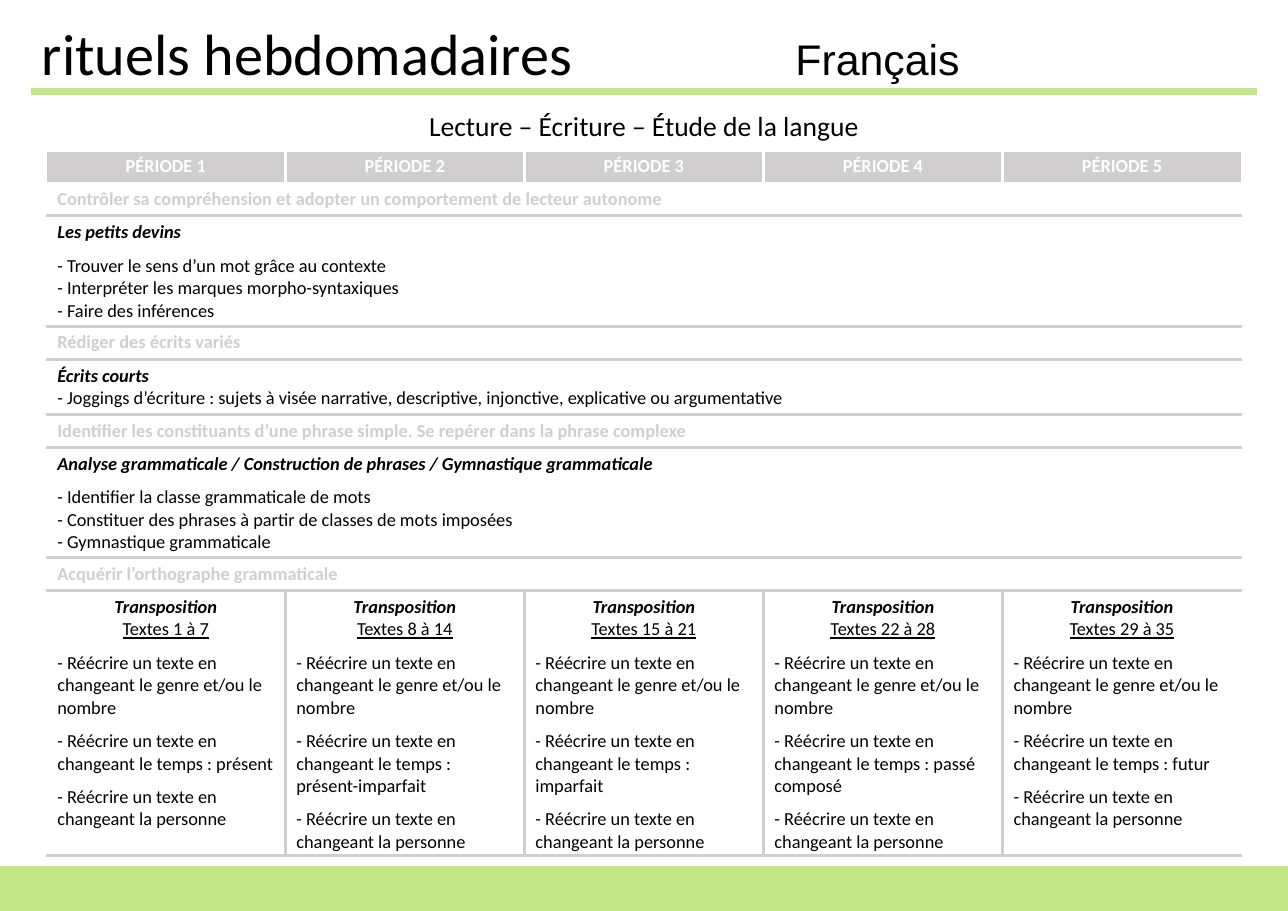
from dataclasses import dataclass

from lxml.etree import SubElement
from pptx import Presentation
from pptx.dml.color import RGBColor
from pptx.enum.shapes import MSO_CONNECTOR as Connector, MSO_SHAPE as Shape
from pptx.enum.text import MSO_ANCHOR as Anchor, MSO_AUTO_SIZE as AutoSize, PP_ALIGN as Align
from pptx.oxml import parse_xml
from pptx.oxml.ns import nsdecls, qn
from pptx.util import Emu, Inches, Pt

COLOURS = {
    "black": "000000",
    "white": "FFFFFF",
    "green": "C3E686",
    "grey": "D0CECE",
    "heading": "D1CECE",
}
WIDTH, HEIGHT = Inches(11.69), Inches(8.27)
PERIODS = 5
COLUMN = Inches(2.17)
TABLE_LEFT, TABLE_TOP = Inches(0.42), Inches(0.95)
MARGIN = Inches(0.28)
SUBJECT_TAB = Inches(6.84)
GAP = 7.3


@dataclass(frozen=True)
class Line:
    text: str
    colour: str = "black"
    size: float = 12
    bold: bool = False
    italic: bool = False
    underline: bool = False
    centred: bool = False
    gap: float = 0


@dataclass(frozen=True)
class Border:
    colour: str = "white"
    width: float = 1


@dataclass(frozen=True)
class Row:
    """A row holds one list of lines per cell; a single cell spans every column."""
    height: float
    cells: list[list[Line]]
    top: Border
    bottom: Border
    inner: Border = Border()
    fill: str = ""


RULE = Border("grey", 2.25)


def rgb(name: str) -> RGBColor:
    return RGBColor.from_string(COLOURS[name])


def heading_row(text: str, top: Border = RULE) -> Row:
    return Row(0.3, [[Line(text, "heading", bold=True)]], top, RULE)


def activity_row(height: float, name: str, items: list[str], gap: float = GAP) -> Row:
    lines = [Line(name, bold=True, italic=True)]
    lines += [Line(f"- {item}", gap=0 if i else gap) for i, item in enumerate(items)]
    return Row(height, [lines], RULE, RULE)


def transposition(texts: str, tense: str) -> list[Line]:
    aims = ["le genre et/ou le nombre", f"le temps : {tense}", "la personne"]
    return [
        Line("Transposition", bold=True, italic=True, centred=True),
        Line(f"Textes {texts}", underline=True, centred=True),
        *(Line(f"- Réécrire un texte en changeant {aim}", gap=GAP) for aim in aims),
    ]


TRANSPOSITIONS = [
    ("1 à 7", "présent"),
    ("8 à 14", "présent-imparfait"),
    ("15 à 21", "imparfait"),
    ("22 à 28", "passé composé"),
    ("29 à 35", "futur"),
]
ROWS = [
    Row(0.41, [[Line("Lecture – Écriture – Étude de la langue", size=18, centred=True)]],
        Border(), Border("white", 3)),
    Row(0.3, [[Line(f"PÉRIODE {n}", "white", bold=True, centred=True)]
              for n in range(1, PERIODS + 1)],
        Border(), Border(), Border("white", 2.25), "grey"),
    heading_row("Contrôler sa compréhension et adopter un comportement de lecteur autonome",
                Border()),
    activity_row(1, "Les petits devins", [
        "Trouver le sens d’un mot grâce au contexte",
        "Interpréter les marques morpho-syntaxiques",
        "Faire des inférences"]),
    heading_row("Rédiger des écrits variés"),
    activity_row(0.5, "Écrits courts", [
        "Joggings d’écriture : sujets à visée narrative, descriptive, injonctive, "
        "explicative ou argumentative"], gap=0),
    heading_row("Identifier les constituants d’une phrase simple. "
                "Se repérer dans la phrase complexe"),
    activity_row(1, "Analyse grammaticale / Construction de phrases / Gymnastique grammaticale", [
        "Identifier la classe grammaticale de mots",
        "Constituer des phrases à partir de classes de mots imposées",
        "Gymnastique grammaticale"]),
    heading_row("Acquérir l’orthographe grammaticale"),
    Row(2.39, [transposition(*period) for period in TRANSPOSITIONS], RULE, RULE, RULE),
]


def set_borders(cell, left: Border, right: Border, top: Border, bottom: Border) -> None:
    properties = cell._tc.get_or_add_tcPr()
    for side, border in zip("LRTB", (left, right, top, bottom)):
        properties.append(parse_xml(
            f'<a:ln{side} {nsdecls("a")} w="{Pt(border.width)}"><a:solidFill>'
            f'<a:srgbClr val="{COLOURS[border.colour]}"/></a:solidFill></a:ln{side}>'))


def write_lines(frame, lines: list[Line]) -> None:
    frame.text = "\n".join(line.text for line in lines)
    for paragraph, line in zip(frame.paragraphs, lines):
        paragraph.alignment = Align.CENTER if line.centred else Align.LEFT
        paragraph.space_before = Pt(line.gap)
        font = paragraph.runs[0].font
        font.name, font.size = "Calibri", Pt(line.size)
        font.bold, font.italic, font.underline = line.bold, line.italic, line.underline
        font.color.rgb = rgb(line.colour)


def add_rituals_table(slide) -> None:
    total = Inches(sum(row.height for row in ROWS))
    table = slide.shapes.add_table(
        len(ROWS), PERIODS, TABLE_LEFT, TABLE_TOP, COLUMN * PERIODS, total).table
    table.first_row = table.horz_banding = False
    for column in table.columns:
        column.width = COLUMN
    for r, row in enumerate(ROWS):
        table.rows[r].height = Inches(row.height)
        for c in range(PERIODS):
            cell = table.cell(r, c)
            cell.margin_bottom = Inches(0.02)
            set_borders(cell, row.inner if c else Border(),
                        row.inner if c < PERIODS - 1 else Border(), row.top, row.bottom)
            if row.fill:
                cell.fill.solid()
                cell.fill.fore_color.rgb = rgb(row.fill)
            else:
                cell.fill.background()
        if len(row.cells) == 1:
            table.cell(r, 0).merge(table.cell(r, PERIODS - 1))
        for c, lines in enumerate(row.cells):
            write_lines(table.cell(r, c).text_frame, lines)


def write_title(slide) -> None:
    title = slide.shapes.title
    title.left, title.top = MARGIN, Inches(0.1)
    title.width, title.height = WIDTH - 2 * MARGIN, Inches(0.74)
    frame = title.text_frame
    frame.auto_size, frame.vertical_anchor = AutoSize.NONE, Anchor.MIDDLE
    heading = frame.paragraphs[0]
    heading.alignment = Align.LEFT
    tabs = SubElement(heading._p.get_or_add_pPr(), qn("a:tabLst"))
    SubElement(tabs, qn("a:tab"), pos=str(SUBJECT_TAB), algn="l")
    for text, size, face in (("rituels hebdomadaires\t", 38, "Calibri"),
                             ("Français", 28, "Arial")):
        run = heading.add_run()
        run.text = text
        run.font.name, run.font.size = face, Pt(size)
        run.font.color.rgb = rgb("black")


def add_green_accents(slide) -> None:
    band_top = Emu(round(HEIGHT * 0.952))
    footer = slide.shapes.add_shape(Shape.RECTANGLE, 0, band_top, WIDTH, HEIGHT - band_top)
    footer.shadow.inherit = False
    footer.fill.solid()
    footer.fill.fore_color.rgb = footer.line.color.rgb = rgb("green")
    footer.line.width = Pt(1)

    rule_y = Inches(0.83)
    underline = slide.shapes.add_connector(
        Connector.STRAIGHT, WIDTH - MARGIN, rule_y, MARGIN, rule_y)
    underline.line.color.rgb, underline.line.width = rgb("green"), Pt(4.75)
    SubElement(underline._element.spPr, qn("a:effectLst"))


def main() -> None:
    deck = Presentation()
    deck.slide_width, deck.slide_height = WIDTH, HEIGHT
    slide = deck.slides.add_slide(deck.slide_layouts[5])
    write_title(slide)
    add_green_accents(slide)
    add_rituals_table(slide)
    deck.save("out.pptx")


if __name__ == "__main__":
    main()
